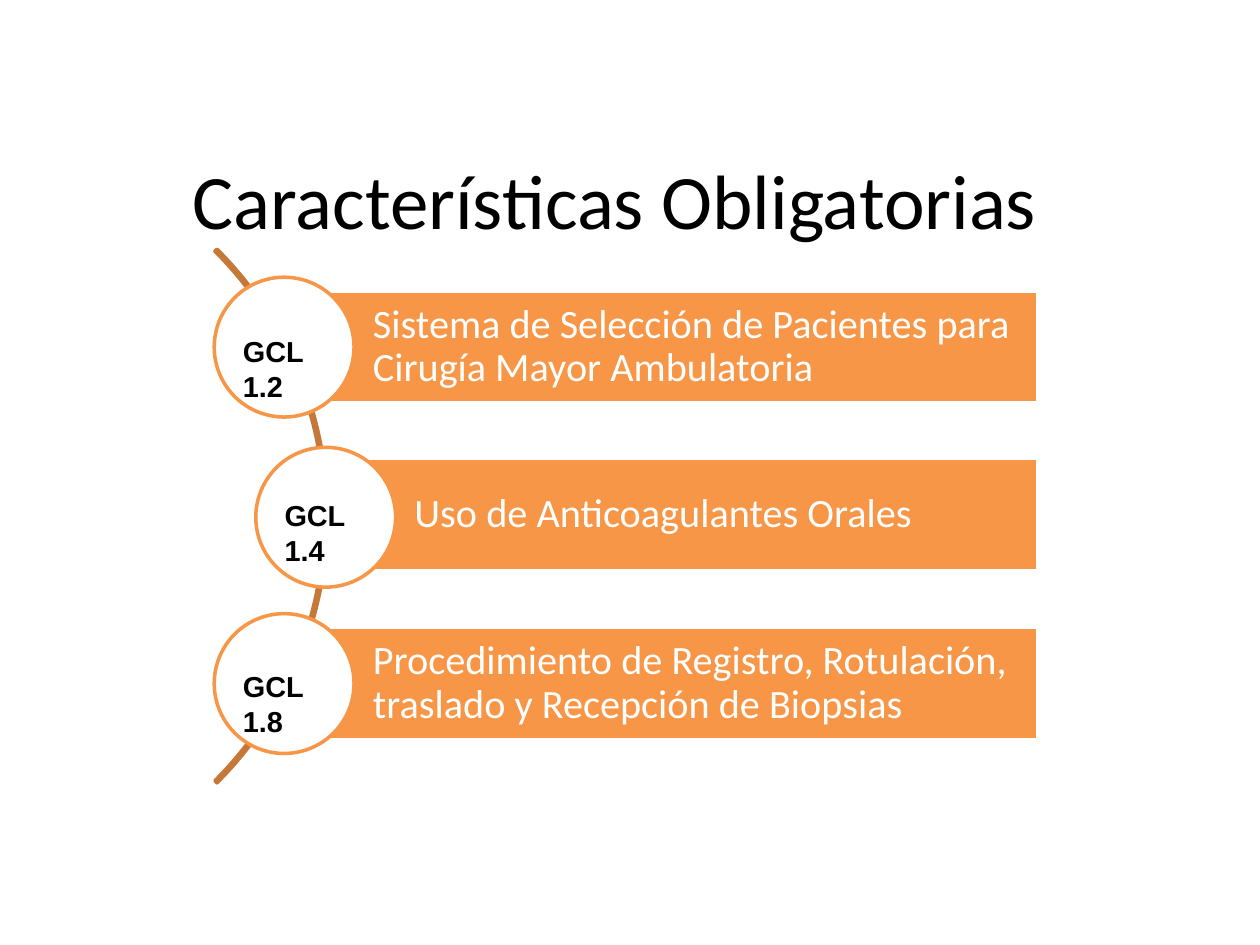
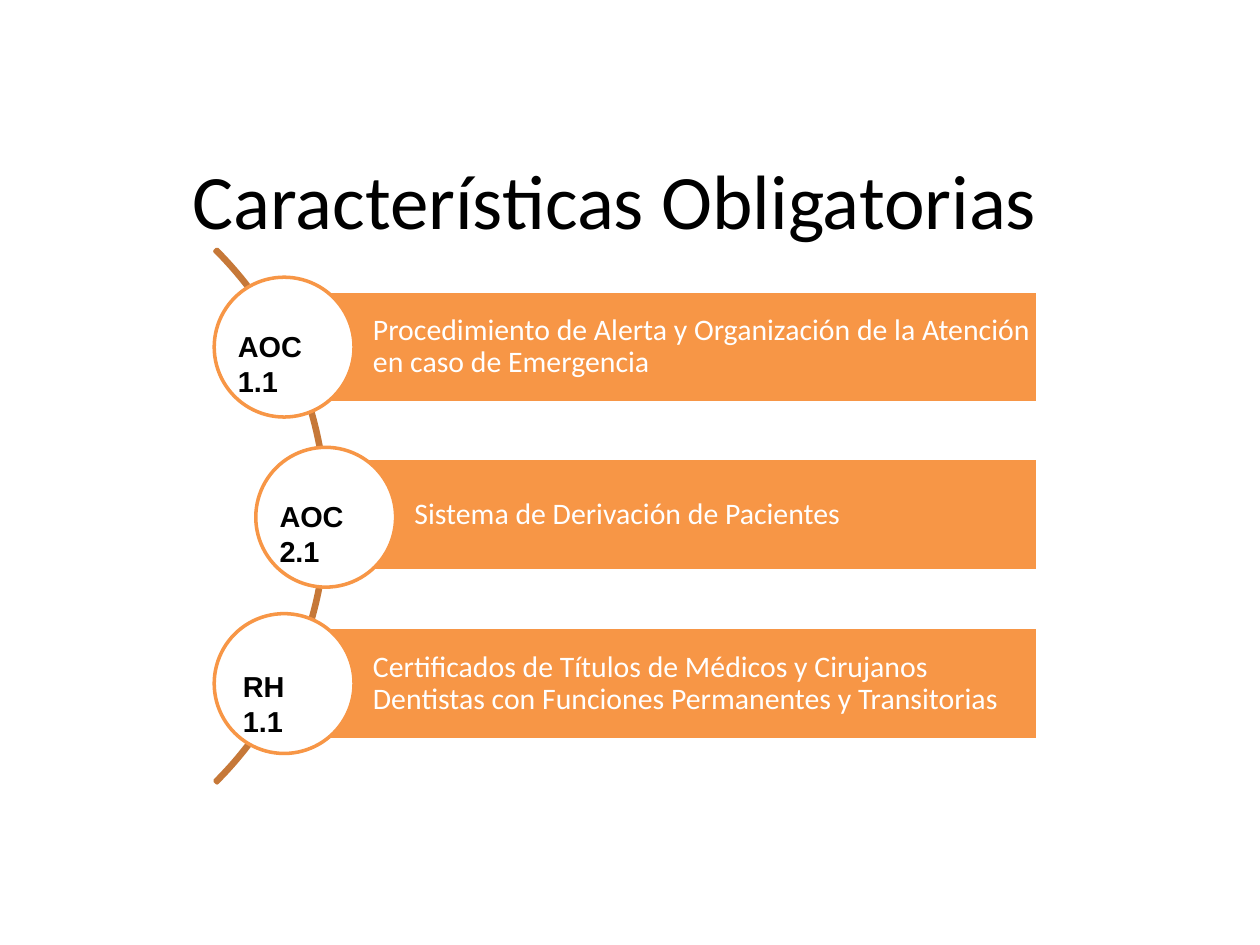
import pptx
import pptx.util
import pptx.dml.color
import pptx.enum.shapes
import pptx.enum.text

Inches, Pt = pptx.util.Inches, pptx.util.Pt
RGBColor = pptx.dml.color.RGBColor
MSO_SHAPE = pptx.enum.shapes.MSO_SHAPE
MSO_ANCHOR = pptx.enum.text.MSO_ANCHOR
PP_ALIGN = pptx.enum.text.PP_ALIGN
MSO_AUTO_SIZE = pptx.enum.text.MSO_AUTO_SIZE

BLACK = RGBColor(0x00, 0x00, 0x00)
WHITE = RGBColor(0xFF, 0xFF, 0xFF)
ORANGE = RGBColor(0xF7, 0x96, 0x46)
BROWN = RGBColor(0xC6, 0x78, 0x38)

TITLE = "Características Obligatorias"
TITLE_BOX = (0.57, 1.03, 8.62, 1.09)
ARC_BOX = (-3.39, 1.1, 5.99, 5.99)
BAR_RIGHT, BAR_HEIGHT = 8.24, 0.89
CIRCLE_SIZE, CIRCLE_OVERHANG = 1.11, 0.55
CODE_HEIGHT = 0.66

# bar left, bar top, circle top
ROWS = [(2.25, 2.31, 2.2), (2.58, 3.64, 3.55), (2.25, 4.98, 4.87)]

# label size, label inset, then per row: code, offset in circle, code width, label
SLIDES = [
    (23, 0.06, [
        ("GCL 1.2", (0.13, 0.4), 0.94,
         "Sistema de Selección de Pacientes para Cirugía Mayor Ambulatoria"),
        ("GCL 1.4", (0.13, 0.35), 0.88, "Uso de Anticoagulantes Orales"),
        ("GCL 1.8", (0.13, 0.39), 0.87,
         "Procedimiento de Registro, Rotulación, traslado y Recepción de Biopsias"),
    ]),
    (17, 0.05, [
        ("AOC 1.1", (0.09, 0.36), 0.94,
         "Procedimiento de Alerta y Organización de la Atención en caso de Emergencia"),
        ("AOC 2.1", (0.09, 0.36), 0.91, "Sistema de Derivación de Pacientes"),
        ("RH 1.1", (0.13, 0.39), 0.87,
         "Certificados de Títulos de Médicos y Cirujanos Dentistas "
         "con Funciones Permanentes y Transitorias"),
    ]),
]


def add_shape(shapes, kind, box, fill, line):
    sp = shapes.add_shape(kind, *map(Inches, box))
    sp.shadow.inherit = False
    if fill is None:
        sp.fill.background()
    else:
        sp.fill.solid()
        sp.fill.fore_color.rgb = fill
    sp.line.color.rgb = line
    sp.line.width = Pt(2)
    return sp


def write(tf, text, size, font, color, align=PP_ALIGN.LEFT, bold=False):
    tf.word_wrap = True
    p = tf.paragraphs[0]
    p.alignment = align
    r = p.add_run()
    r.text = text
    r.font.size = Pt(size)
    r.font.name = font
    r.font.bold = bold
    r.font.color.rgb = color
    return p


def add_title(s, box):
    tf = s.shapes.add_textbox(*map(Inches, box)).text_frame
    tf.vertical_anchor = MSO_ANCHOR.MIDDLE
    write(tf, TITLE, 44, "Calibri", BLACK, PP_ALIGN.CENTER)


def add_arc(shapes, box):
    arc = add_shape(shapes, MSO_SHAPE.BLOCK_ARC, box, None, BROWN)
    for i, value in enumerate((189, 27, 0.004)):
        arc.adjustments[i] = value


def add_bar(shapes, left, top, label, size, inset):
    box = (left, top, BAR_RIGHT - left, BAR_HEIGHT)
    tf = add_shape(shapes, MSO_SHAPE.RECTANGLE, box, ORANGE, WHITE).text_frame
    tf.vertical_anchor = MSO_ANCHOR.MIDDLE
    tf.margin_left = Inches(0.71)
    tf.margin_top = tf.margin_right = tf.margin_bottom = Inches(inset)
    write(tf, label, size, "Calibri", WHITE).line_spacing = 0.9


def add_code(s, left, top, width, code):
    box = (left, top, width, CODE_HEIGHT)
    tf = s.shapes.add_textbox(*map(Inches, box)).text_frame
    tf.auto_size = MSO_AUTO_SIZE.SHAPE_TO_FIT_TEXT
    write(tf, code, 16.5, "Arial", BLACK, bold=True)


def add_list_slide(prs, size, inset, items):
    s = prs.slides.add_slide(prs.slide_layouts[6])
    add_title(s, TITLE_BOX)
    diagram = s.shapes.add_group_shape().shapes
    add_arc(diagram, ARC_BOX)
    for (left, top, circle_top), (code, (dx, dy), width, label) in zip(ROWS, items):
        circle_left = left - CIRCLE_OVERHANG
        add_bar(diagram, left, top, label, size, inset)
        add_shape(diagram, MSO_SHAPE.OVAL,
                  (circle_left, circle_top, CIRCLE_SIZE, CIRCLE_SIZE), WHITE, ORANGE)
        add_code(s, circle_left + dx, circle_top + dy, width, code)


def main():
    prs = pptx.Presentation()
    prs.slide_width, prs.slide_height = Inches(10), Inches(7.5)
    for size, inset, items in SLIDES:
        add_list_slide(prs, size, inset, items)
    prs.save("out.pptx")


if __name__ == "__main__":
    main()
